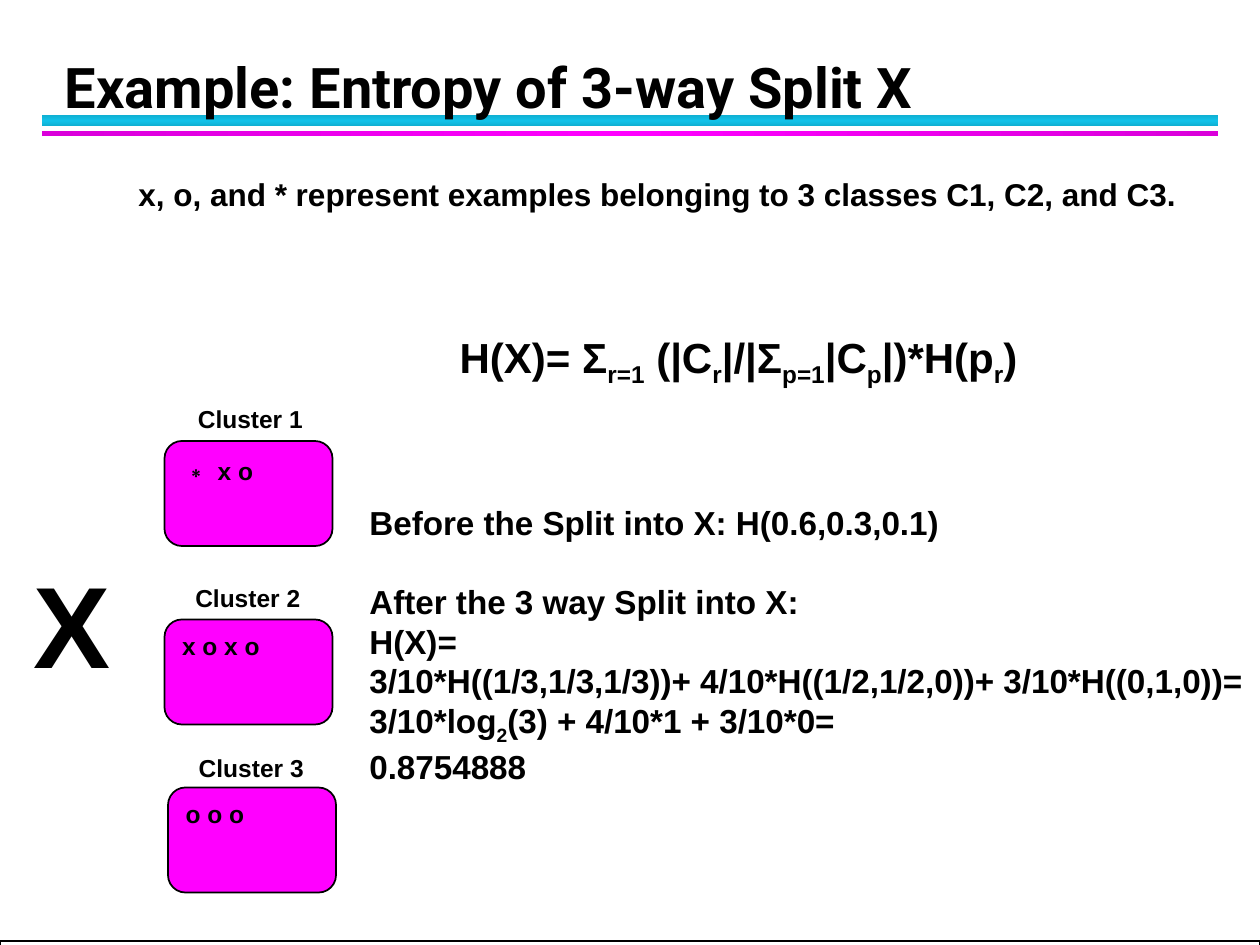
from copy import deepcopy
from pptx import Presentation
from pptx import util as u
from pptx.dml import color
from pptx.enum import shapes, text
from pptx.oxml import ns

Pt = u.Pt
BLACK, WHITE, PINK = "000000", "FFFFFF", "FF00FF"


def hue(code):
    return color.RGBColor.from_string(code)


def write(shape, words, size=14, font="Arial", wrap=False, anchor="TOP",
          gaps=None, pitch=None):
    """Fill a shape with one paragraph per line; ~marks~ enclose subscripts."""
    frame = shape.text_frame
    frame.word_wrap = wrap
    frame.vertical_anchor = getattr(text.MSO_ANCHOR, anchor)
    for i, line in enumerate(words.split("\n")):
        para = frame.paragraphs[0] if i == 0 else frame.add_paragraph()
        para.alignment = text.PP_ALIGN.LEFT
        para.space_before = Pt((gaps or {}).get(i, 0))
        if pitch:
            para.line_spacing = Pt(pitch)
        for j, part in enumerate(line.split("~")):
            if not part:
                continue
            run = para.add_run()
            run.text = part
            run.font.name, run.font.size = font, Pt(size)
            run.font.bold = True
            run.font.color.rgb = hue(BLACK)
            if j % 2:
                run._r.get_or_add_rPr().set("baseline", "-25000")
    return frame


prs = Presentation()
prs.slide_width, prs.slide_height = Pt(720), Pt(540)
slide = prs.slides.add_slide(prs.slide_layouts[6])
kit = slide.shapes
kinds = shapes.MSO_SHAPE

# Two gradient rules under the title
for top, high, edge, mid, angle in [
    (66, 6, "10B0D3", "12C2E9", 90),
    (75, 3, "DA00DA", PINK, 0),
]:
    bar = kit.add_shape(kinds.RECTANGLE, Pt(24), Pt(top), Pt(672), Pt(high))
    bar.shadow.inherit = False
    bar.line.fill.background()
    bar.fill.gradient()
    bar.fill.gradient_angle = angle
    stops = bar._element.spPr.find(".//" + ns.qn("a:gsLst"))
    stops.insert(1, deepcopy(stops[0]))
    for stop, place, code in zip(bar.fill.gradient_stops, (0, 0.5, 1),
                                 (edge, mid, edge)):
        stop.position = place
        stop.color.rgb = hue(code)

# Footer strip
strip = kit.add_shape(kinds.RECTANGLE, Pt(0), Pt(537.6), Pt(720), Pt(24))
strip.shadow.inherit = False
strip.fill.solid()
strip.fill.fore_color.rgb = hue(WHITE)
strip.line.color.rgb = hue(BLACK)
strip.line.width = Pt(1)

# Title
title = kit.add_textbox(Pt(30), Pt(12), Pt(652), Pt(60))
write(title, "Example: Entropy of 3-way Split X", size=32, font="Roboto",
      wrap=True, anchor="BOTTOM", pitch=36)

# Clusters: a caption above each box
for num, (left, top, name_x, name_y, items) in enumerate([
    (94, 252, 106, 227.5, "∗ ~~x o"),
    (94, 354, 104.5, 329.5, "x o x o"),
    (96, 450, 106.5, 427, "o o o"),
], 1):
    box = kit.add_shape(kinds.ROUNDED_RECTANGLE, Pt(left), Pt(top),
                        Pt(96), Pt(60))
    box.shadow.inherit = False
    box.fill.solid()
    box.fill.fore_color.rgb = hue(PINK)
    box.line.color.rgb = hue(BLACK)
    box.line.width = Pt(1)
    frame = write(box, items, wrap=True)
    if num == 1:
        frame.paragraphs[0].runs[0].font.size = Pt(16)
    name = kit.add_textbox(Pt(name_x), Pt(name_y), Pt(75), Pt(24.5))
    write(name, f"Cluster {num}")

# Legend, split label, working and formula
work = """Before the Split into X: H(0.6,0.3,0.1)
After the 3 way Split into X:
H(X)=
3/10*H((1/3,1/3,1/3))+ 4/10*H((1/2,1/2,0))+ 3/10*H((0,1,0))=
3/10*log~2~(3) + 4/10*1 + 3/10*0=
0.8754888"""
for left, top, wide, high, words, style in [
    (72, 96.5, 613.5, 29,
     "x, o, and * represent examples belonging to 3 classes C1, C2, and C3.",
     dict(size=18)),
    (12, 312.5, 59, 87, "X", dict(size=66)),
    (204, 283.7, 521, 168.5, work, dict(size=19, gaps={1: 22})),
    (255.6, 185.8, 674.6, 65.5,
     "H(X)= Σ~r=1~ (|C~r~|/|Σ~p=1~|C~p~|)*H(p~r~)",
     dict(size=24, wrap=True)),
]:
    area = kit.add_textbox(Pt(left), Pt(top), Pt(wide), Pt(high))
    write(area, words, **style)

prs.save("out.pptx")
